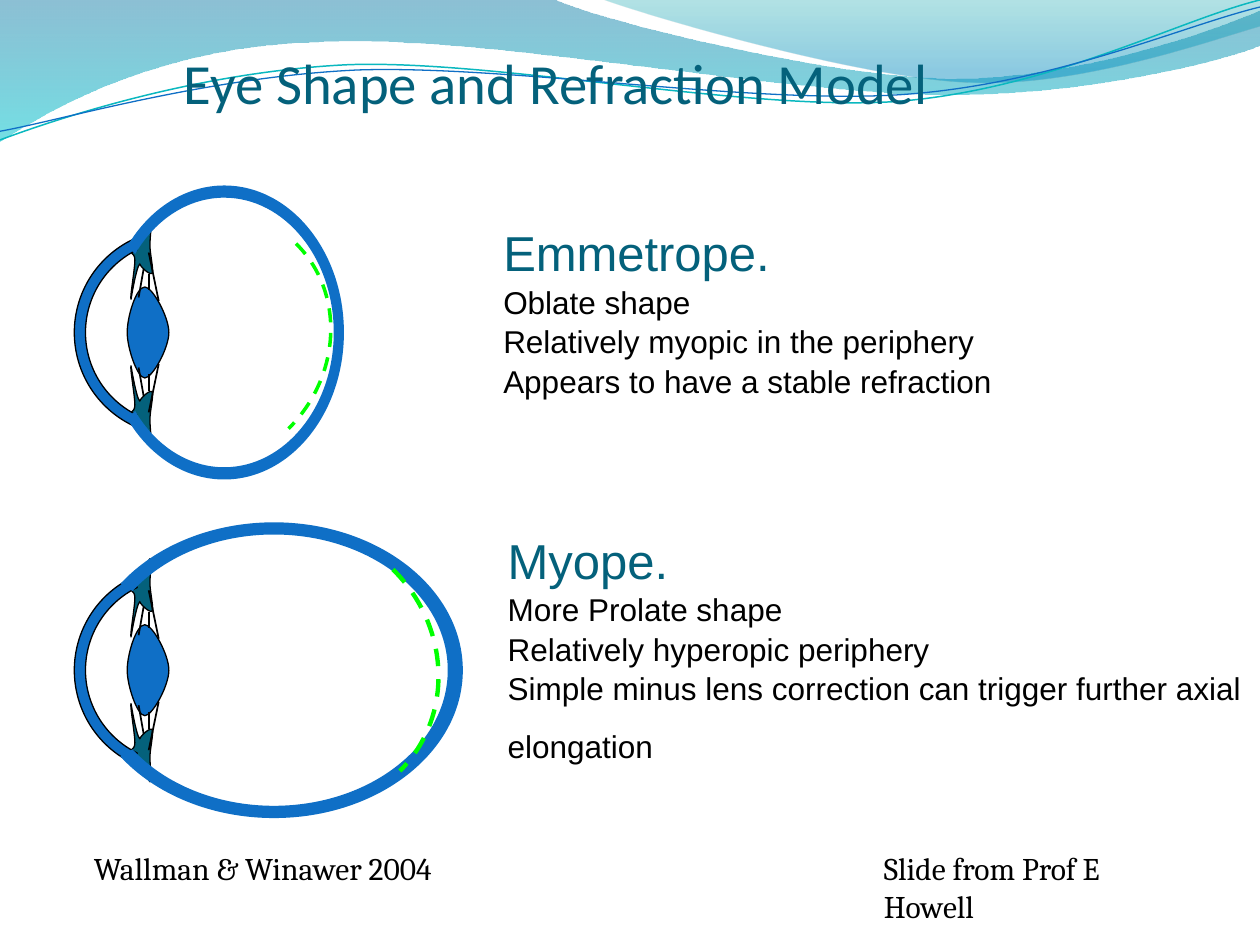
from math import cos, radians, sin, tan

from pptx import Presentation
from pptx.dml.color import RGBColor
from pptx.enum.dml import MSO_LINE
from pptx.enum.shapes import MSO_CONNECTOR
from pptx.enum.text import MSO_ANCHOR, MSO_AUTO_SIZE as AutoSize, PP_ALIGN
from pptx.oxml.ns import qn
from pptx.oxml.xmlchemy import OxmlElement
from pptx.util import Pt

COLORS = {
    "heading": "04617B", "ciliary": "04617B", "eye": "0F6FC6",
    "ink": "000000", "retina": "00FF00",
    "band_top": "0074A1", "band_bottom": "00C6CF",
    "corner_top": "00A1A9", "corner_bottom": "008BBF",
    "teal_line": "0AB8BF", "blue_line": "0F6FC6",
}


def rgb(name):
    return RGBColor.from_string(COLORS[name])


# Geometry and drawing helpers; a curve is a start and three points per cubic
def arc(cx, rx, ry, angles):
    """Elliptical arc through the given angles, one cubic between neighbours."""
    points = [(cos(radians(angles[0])), sin(radians(angles[0])))]
    for start, end in zip(angles, angles[1:]):
        a, b = radians(start), radians(end)
        k = 4 / 3 * tan((b - a) / 4)
        points += [(cos(a) - k * sin(a), sin(a) + k * cos(a)),
                   (cos(b) + k * sin(b), sin(b) - k * cos(b)), (cos(b), sin(b))]
    return [(cx + rx * x, ry * y) for x, y in points]


def ring(cx, outer, inner, angles):
    return [arc(cx, *outer, angles), arc(cx, *inner, angles[::-1])]


def outline(slide, curves, fill=None, line=None, width=0.75, close=True):
    """Freeform of cubic curves, each joined to the next by a straight line."""
    emus = [(Pt(x), Pt(y)) for curve in curves for x, y in curve]
    builder = slide.shapes.build_freeform(*emus[0], scale=1.0)
    builder.add_line_segments(emus[1:], close=close)
    shape = builder.convert_to_shape()
    segments = [None] + list(shape._element.spPr.iter(qn("a:lnTo")))
    first = 0
    for curve in curves:
        for i in range(first + 1, first + len(curve), 3):
            cubic = OxmlElement("a:cubicBezTo")
            segments[i].addprevious(cubic)
            for segment in segments[i:i + 3]:
                cubic.append(segment[0])
                segment.getparent().remove(segment)
        first += len(curve)
    shape.shadow.inherit = False
    if fill:
        shape.fill.solid()
        shape.fill.fore_color.rgb = rgb(fill)
    else:
        shape.fill.background()
    if line:
        shape.line.color.rgb = rgb(line)
        shape.line.width = Pt(width)
    else:
        shape.line.fill.background()
    return shape


def fade(shape, stops):
    """Top-to-bottom gradient; each stop is position, colour, opacity in percent."""
    shape.fill.gradient()
    shape.fill.gradient_angle = 270
    for stop, (position, color, _) in zip(shape.fill.gradient_stops, stops):
        stop.position = position
        stop.color.rgb = rgb(color)
    colors = shape._element.spPr.find(qn("a:gradFill")).iter(qn("a:srgbClr"))
    for element, (_, _, opacity) in zip(colors, stops):
        alpha = OxmlElement("a:alpha")
        alpha.set("val", str(opacity * 1000))
        element.append(alpha)


def zonule(slide, start, end):
    fibre = slide.shapes.add_connector(MSO_CONNECTOR.STRAIGHT, *map(Pt, start + end))
    fibre.line.color.rgb = rgb("ink")
    fibre.line.width = Pt(1)
    fibre._element.spPr.append(OxmlElement("a:effectLst"))


def style(run, font, size, color):
    run.font.name = font
    run.font.size = Pt(size)
    run.font.color.rgb = rgb(color)


# Wave decoration along the top edge
def add_waves(slide, width):
    band_upper = [(317, 0), (343, 12), (478, 45), (546, 45),
                  (614, 45), (690, 19), (width, 6)]
    band_lower = [(width, 26), (708, 32), (626, 55), (537, 54), (448, 54), (275, 20),
                  (185, 24), (93, 26), (33, 60), (0, 81)]
    band = outline(slide, [[(0, 0)], band_upper, band_lower])
    fade(band, [(0, "band_top", 45), (1, "band_bottom", 55)])

    corner_edge = [(345, 0), (366, 8), (491, 45), (554, 47),
                   (616, 50), (692, 23), (width, 15)]
    corner = outline(slide, [corner_edge, [(width, 0)]])
    fade(corner, [(0, "corner_top", 30), (0.8, "corner_bottom", 45)])

    teal = [(0, 80), (35, 67), (114, 41), (199, 37), (284, 34), (427, 64),
            (513, 58), (600, 51), (675, 11), (width, 0)]
    blue = [(0, 75), (34, 69), (118, 44), (204, 40), (290, 37), (430, 60),
            (516, 54), (602, 48), (675, 15), (width, 4)]
    outline(slide, [teal], line="teal_line", width=0.85, close=False)
    outline(slide, [blue], line="blue_line", close=False)


# Title
def add_title(slide, left, top, width, height):
    title = slide.shapes.title
    title.left, title.top, title.width, title.height = map(Pt, (left, top, width, height))
    frame = title.text_frame
    frame.text = "Eye Shape and Refraction Model"
    frame.auto_size = AutoSize.NONE
    frame.vertical_anchor = MSO_ANCHOR.BOTTOM
    frame.margin_left = frame.margin_right = frame.margin_bottom = 0
    frame.margin_top = Pt(3.6)
    frame.paragraphs[0].alignment = PP_ALIGN.LEFT
    style(frame.paragraphs[0].runs[0], "Calibri", 32.4, "heading")
    slide.shapes._spTree.append(title._element)  # in front of the waves


# Eye cross-section: x runs from the cornea, y upwards from the optical axis
CILIARY = [(43.2, 63.7), (40.3, 59.4), (34.6, 53.6), (32.4, 48.6),
           (30.2, 45), (34.6, 46.4), (34.6, 41.4), (34.6, 36.4), (31.7, 19.8), (32.4, 19),
           (32.4, 19), (35.3, 37), (37.4, 39.2), (38.2, 37), (43.9, 32), (44.6, 34.2),
           (45.4, 35.6), (43.2, 45), (43.2, 50), (43.2, 54.4), (44.6, 63.7), (43.2, 63.7)]
LENS = [(40.3, 26), (35.3, 26), (30.2, 9), (30.2, 0), (30.2, -9), (36, -26), (40.3, -26),
        (44.6, -26), (54, -9), (54, 0), (54, 9), (44.6, 26), (40.3, 26)]
ZONULES = [((42.5, 33.5), (42.5, 24)), ((39.6, 36.4), (36.7, 20)),
           ((42.5, 45.7), (48.2, 18))]


def add_eye(slide, left, top, width, height, globe_radius, wall, retina, retina_width):
    axis = top + height / 2

    def place(points, flip=1):
        return [(left + x, axis - flip * y) for x, y in points]

    for flip in (-1, 1):
        outline(slide, [place(CILIARY, flip)], "ciliary", "ink")
    cornea = ring(59, (59, 59), (52.6, 52.6), [116, 180, 244])
    outline(slide, map_curves(place, cornea), "eye", "ink")
    globe = ring(width - globe_radius, (globe_radius, height / 2),
                 (globe_radius - wall, height / 2 - 7), [-144.3, -90, 0, 90, 144.3])
    outline(slide, map_curves(place, globe), "eye")
    outline(slide, [place(LENS)], "eye", "ink")
    for flip in (1, -1):
        for fibre in ZONULES:
            zonule(slide, *place(fibre, flip))
    image_shell = outline(slide, [place(retina)], line="retina",
                          width=retina_width, close=False)
    image_shell.line.dash_style = MSO_LINE.DASH


def map_curves(place, curves):
    return [place(curve) for curve in curves]


# Text blocks
def add_text(slide, left, top, width, height, text):
    box = slide.shapes.add_textbox(*map(Pt, (left, top, width, height)))
    frame = box.text_frame
    frame.word_wrap = True
    frame.auto_size = AutoSize.SHAPE_TO_FIT_TEXT
    frame.text = text
    return frame


def add_description(slide, left, top, width, height, lines):
    frame = add_text(slide, left, top, width, height, "\n".join(lines))
    for i, paragraph in enumerate(frame.paragraphs):
        paragraph.line_spacing = 1.04
        style(paragraph.runs[0], "Arial", *((18, "ink") if i else (28, "heading")))
    return frame


def add_credit(slide, left, top, width, height, text):
    frame = add_text(slide, left, top, width, height, text)
    style(frame.paragraphs[0].runs[0], "Cambria", 18, "ink")


def main():
    prs = Presentation()
    prs.slide_width, prs.slide_height = Pt(720), Pt(540)
    slide = prs.slides.add_slide(prs.slide_layouts[5])
    add_waves(slide, 720)
    add_title(slide, 105, 31.7, 578, 34.6)
    # Myope
    add_eye(slide, 42.5, 298.5, 222, 169, 108, 8.6,
            [(182, 57.6), (215, 25), (217, -26.6), (186, -57.6)], 2.5)
    myope = add_description(slide, 283, 298, 437, 155.5, [
        "Myope.", "More Prolate shape", "Relatively hyperopic periphery",
        "Simple minus lens correction can trigger further axial elongation"])
    closing_space = myope.paragraphs[-1].add_run()
    closing_space.text = " "
    style(closing_space, "Arial", 28, "ink")
    # Emmetrope
    add_eye(slide, 42.5, 106, 154, 168, 68.4, 5.8,
            [(126.7, 50.8), (155, 22.7), (152.6, -24.8), (122.4, -55)], 2)
    add_description(slide, 280.5, 122.5, 425.5, 127.5, [
        "Emmetrope.", "Oblate shape", "Relatively myopic in the periphery",
        "Appears to have a stable refraction"])
    # Credits
    add_credit(slide, 46.5, 481.5, 275, 36, "Wallman & Winawer 2004")
    add_credit(slide, 498, 481.5, 190, 29, "Slide from Prof E Howell")
    prs.save("out.pptx")


if __name__ == "__main__":
    main()
